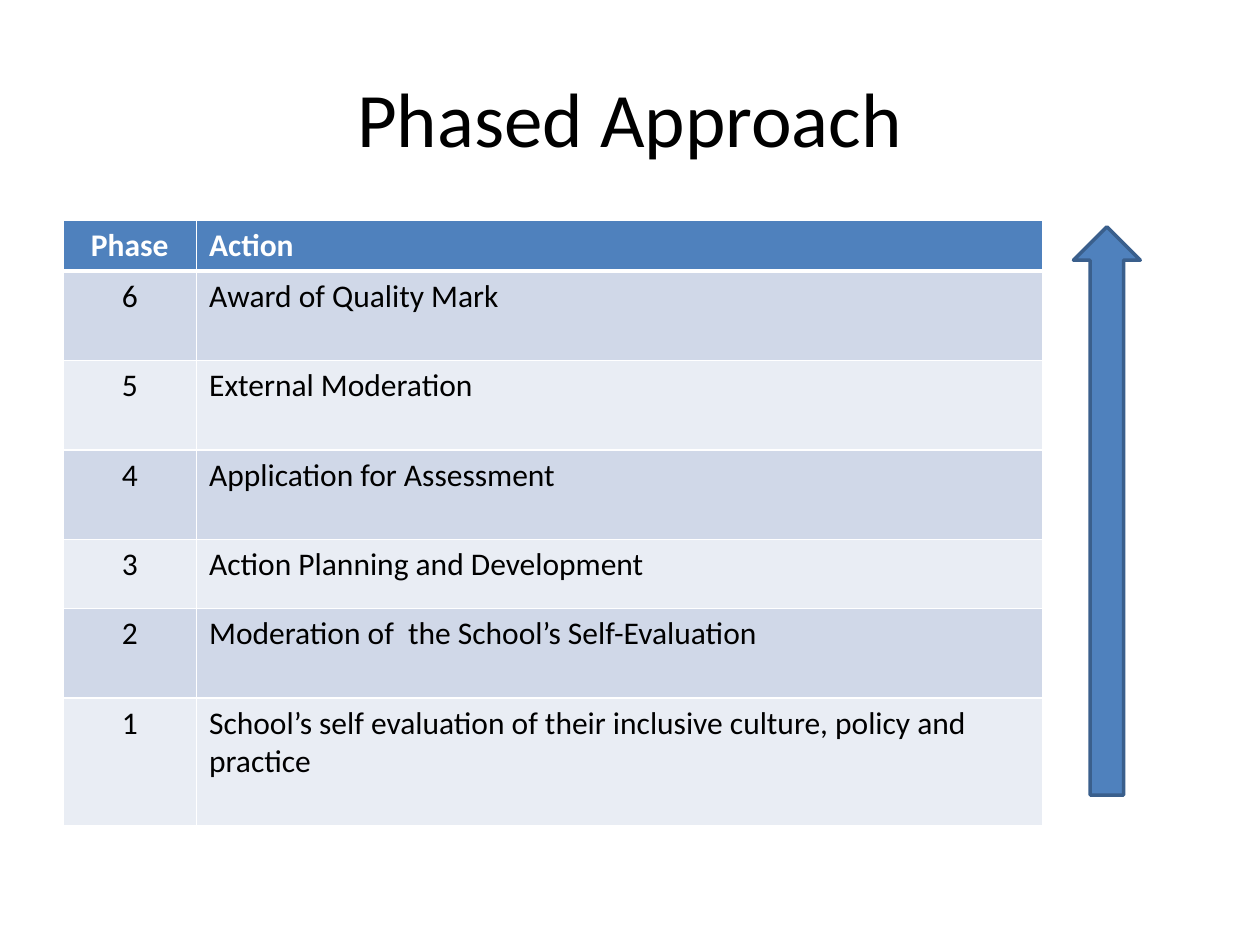
"""Build the Phased Approach slide: a table of phases beside an upward arrow."""
import pptx
import pptx.dml.color
import pptx.enum.shapes
import pptx.enum.text
import pptx.oxml
import pptx.oxml.ns
import pptx.util

Inches, Pt = pptx.util.Inches, pptx.util.Pt
ALIGN = pptx.enum.text.PP_ALIGN

TITLE = "Phased Approach"
ROWS = [
    ("Phase", "Action", 0.4),
    ("6", "Award of Quality Mark", 0.71),
    ("5", "External Moderation", 0.71),
    ("4", "Application for Assessment", 0.71),
    ("3", "Action Planning and Development", 0.55),
    ("2", "Moderation of  the School’s Self-Evaluation", 0.71),
    ("1", "School’s self evaluation of their inclusive culture, policy and practice", 1.01),
]
COLS = [1.06, 6.72]
HEAD, BANDS = "4F81BD", ["E9EDF4", "D0D8E8"]
WHITE, BLACK, EDGE = "FFFFFF", "000000", "3A5F8C"


def color(code):
    return pptx.dml.color.RGBColor.from_string(code)


def paint(item, code):
    item.fill.solid()
    item.fill.fore_color.rgb = color(code)


def write(frame, text, size, code, align, bold=False):
    frame.text = text
    par = frame.paragraphs[0]
    par.alignment = align
    par.font.name, par.font.size, par.font.bold = "Calibri", Pt(size), bold
    par.font.color.rgb = color(code)


def border(cell, sides):
    props = cell._tc.get_or_add_tcPr()
    for spot, (side, width) in enumerate(sides.items()):
        props.insert(spot, pptx.oxml.parse_xml(
            f'<a:{side} {pptx.oxml.ns.nsdecls("a")} w="{Pt(width)}">'
            f'<a:solidFill><a:srgbClr val="{WHITE}"/></a:solidFill></a:{side}>'))


def add_title(slide):
    box = slide.shapes.add_textbox(Inches(0.5), Inches(0.3), Inches(9), Inches(1.25))
    frame = box.text_frame
    frame.word_wrap = True
    frame.vertical_anchor = pptx.enum.text.MSO_ANCHOR.MIDDLE
    write(frame, TITLE, 44, BLACK, ALIGN.CENTER)


def add_phases(slide):
    high = sum(row[2] for row in ROWS)
    table = slide.shapes.add_table(
        len(ROWS), len(COLS), Inches(0.5), Inches(1.75),
        Inches(sum(COLS)), Inches(high)).table
    for col, width in zip(table.columns, COLS):
        col.width = Inches(width)
    for r, (phase, action, height) in enumerate(ROWS):
        table.rows[r].height = Inches(height)
        top = r == 0
        for c, text in enumerate((phase, action)):
            cell = table.cell(r, c)
            paint(cell, HEAD if top else BANDS[r % 2])
            border(cell, {"lnL": 1, "lnR": 1, "lnT": 3 if r == 1 else 1,
                          "lnB": 3 if top else 1})
            write(cell.text_frame, text, 18, WHITE if top else BLACK,
                  ALIGN.LEFT if c else ALIGN.CENTER, top)


def add_arrow(slide):
    arrow = slide.shapes.add_shape(
        pptx.enum.shapes.MSO_SHAPE.UP_ARROW,
        Inches(8.52), Inches(1.8), Inches(0.53), Inches(4.51))
    arrow.shadow.inherit = False
    paint(arrow, HEAD)
    arrow.line.color.rgb = color(EDGE)
    arrow.line.width = Pt(2)


def main():
    deck = pptx.Presentation()
    deck.slide_width, deck.slide_height = Inches(10), Inches(7.5)
    slide = deck.slides.add_slide(deck.slide_layouts[6])
    add_title(slide)
    add_phases(slide)
    add_arrow(slide)
    deck.save("out.pptx")


if __name__ == "__main__":
    main()
